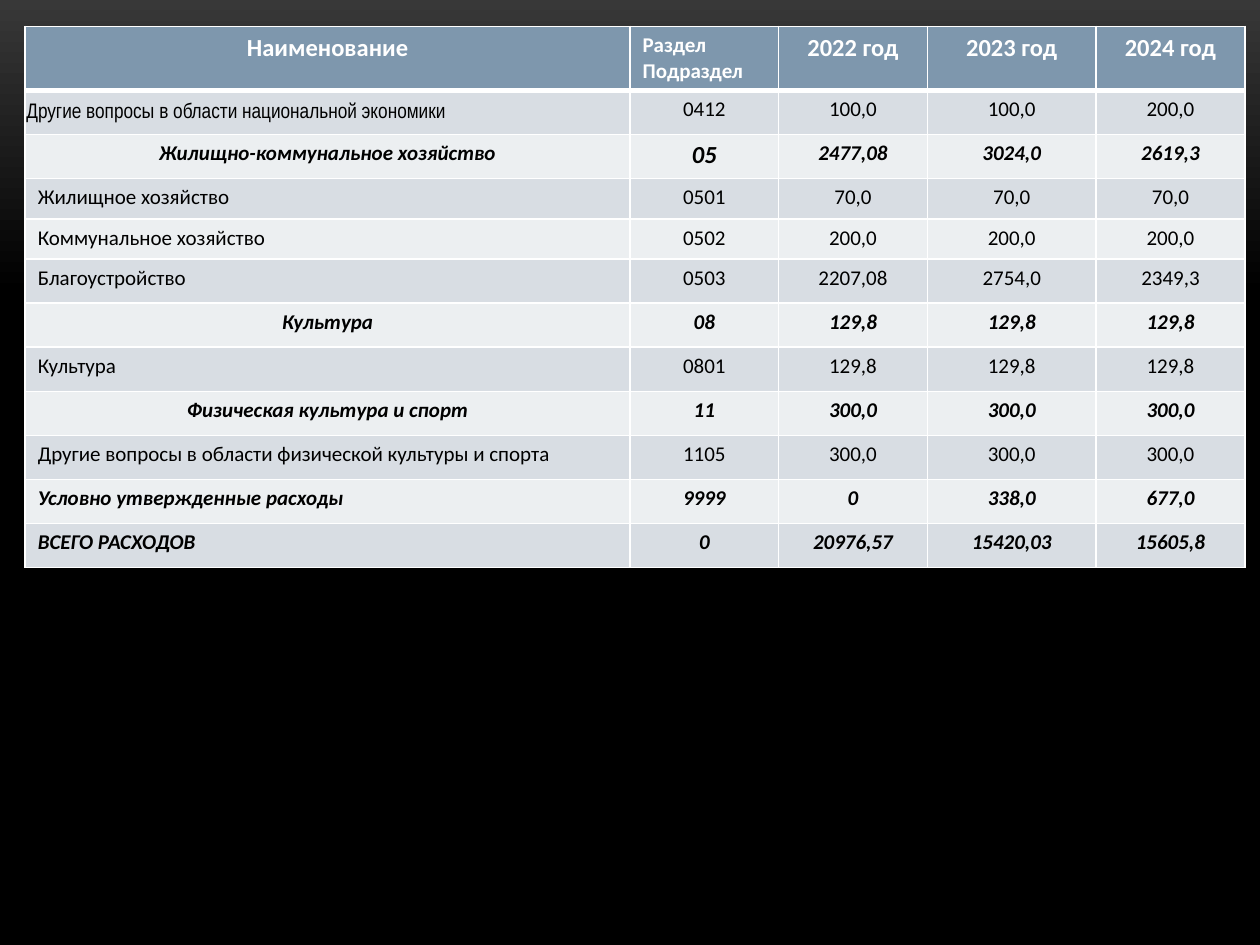
from lxml import etree
from pptx import Presentation
from pptx.dml.color import RGBColor
from pptx.enum.text import MSO_ANCHOR, PP_ALIGN
from pptx.oxml.ns import qn
from pptx.util import Inches, Pt

CENTER, LEFT = PP_ALIGN.CENTER, PP_ALIGN.LEFT
MIDDLE = MSO_ANCHOR.MIDDLE

HEAD = ["Наименование", "Раздел\nПодраздел", "2022 год", "2023 год", "2024 год"]
# Kind of row, then its cells
ROWS = [
    ("item", "Другие вопросы в области национальной экономики", "0412", "100,0", "100,0", "200,0"),
    ("section", "Жилищно-коммунальное хозяйство", "05", "2477,08", "3024,0", "2619,3"),
    ("item", "Жилищное хозяйство", "0501", "70,0", "70,0", "70,0"),
    ("item", "Коммунальное хозяйство", "0502", "200,0", "200,0", "200,0"),
    ("item", "Благоустройство", "0503", "2207,08", "2754,0", "2349,3"),
    ("section", "Культура", "08", "129,8", "129,8", "129,8"),
    ("item", "Культура", "0801", "129,8", "129,8", "129,8"),
    ("section", "Физическая культура и спорт", "11", "300,0", "300,0", "300,0"),
    ("item", "Другие вопросы в области физической культуры и спорта", "1105", "300,0", "300,0", "300,0"),
    ("total", "Условно утвержденные расходы", "9999", "0", "338,0", "677,0"),
    ("total", "ВСЕГО РАСХОДОВ", "0", "20976,57", "15420,03", "15605,8"),
]
WIDTHS = [4.8, 1.18, 1.18, 1.34, 1.18]
HEIGHTS = [0.5, 0.35, 0.35, 0.32, 0.32] + [0.35] * 7
HEAD_FILL, BANDS = "7E97AD", ["D8DDE3", "ECEFF1"]
WHITE, BLACK = "FFFFFF", "000000"


def rgb(code):
    return RGBColor.from_string(code)


def border(cell, top, bottom):
    """Draw white cell edges; call before the fill, which must follow them in the XML."""
    props = cell._tc.get_or_add_tcPr()
    for side, width in (("L", 1), ("R", 1), ("T", top), ("B", bottom)):
        line = etree.SubElement(props, qn("a:ln" + side), w=str(Pt(width)))
        fill = etree.SubElement(line, qn("a:solidFill"))
        etree.SubElement(fill, qn("a:srgbClr"), val=WHITE)


def write(cell, text, size, align, color, bold=False, italic=False, face="Calibri"):
    cell.text = text
    for para in cell.text_frame.paragraphs:
        para.alignment = align
        font = para.font
        font.name, font.size = face, Pt(size)
        font.bold, font.italic = bold, italic
        font.color.rgb = rgb(color)


def paint(cell, color):
    cell.fill.solid()
    cell.fill.fore_color.rgb = rgb(color)


deck = Presentation()
deck.slide_width, deck.slide_height = Inches(10), Inches(7.5)
slide = deck.slides.add_slide(deck.slide_layouts[6])

back = slide.background.fill
back.gradient()
back.gradient_angle = 270
for stop, (place, color) in zip(back.gradient_stops, [(0, "383838"), (0.31, BLACK)]):
    stop.position = place
    stop.color.rgb = rgb(color)

table = slide.shapes.add_table(
    len(HEIGHTS), len(WIDTHS), Inches(0.2), Inches(0.21),
    Inches(sum(WIDTHS)), Inches(sum(HEIGHTS))).table
for col, width in zip(table.columns, WIDTHS):
    col.width = Inches(width)
for row, height in zip(table.rows, HEIGHTS):
    row.height = Inches(height)

for c, text in enumerate(HEAD):
    cell = table.cell(0, c)
    border(cell, 1, 3)
    paint(cell, HEAD_FILL)
    code = c == 1
    write(cell, text, 12 if code else 14, LEFT if code else CENTER, WHITE, bold=True)

for r, (kind, *cells) in enumerate(ROWS, 1):
    strong = kind != "item"
    for c, text in enumerate(cells):
        cell = table.cell(r, c)
        border(cell, 3 if r == 1 else 1, 1)
        paint(cell, BANDS[(r - 1) % 2])
        align = LEFT if c == 0 and kind != "section" else CENTER
        write(cell, text, 14 if text == "05" else 12, align, BLACK, strong, strong)

# The first item is set tight in a narrow face
first = table.cell(1, 0)
first.vertical_anchor = MIDDLE
first.margin_left = first.margin_top = first.margin_right = Inches(0.01)
first.margin_bottom = 0
first.text_frame.paragraphs[0].font.name = "Arial Narrow"

deck.save("out.pptx")
